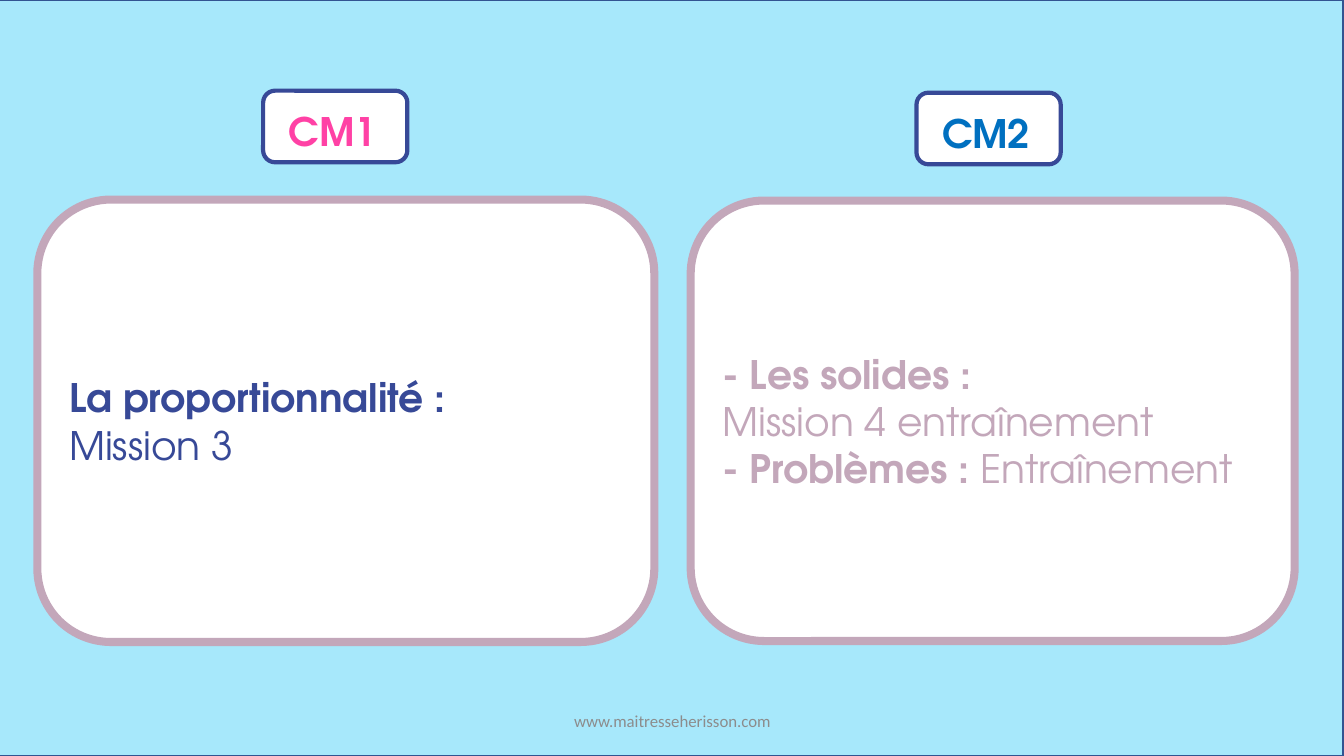
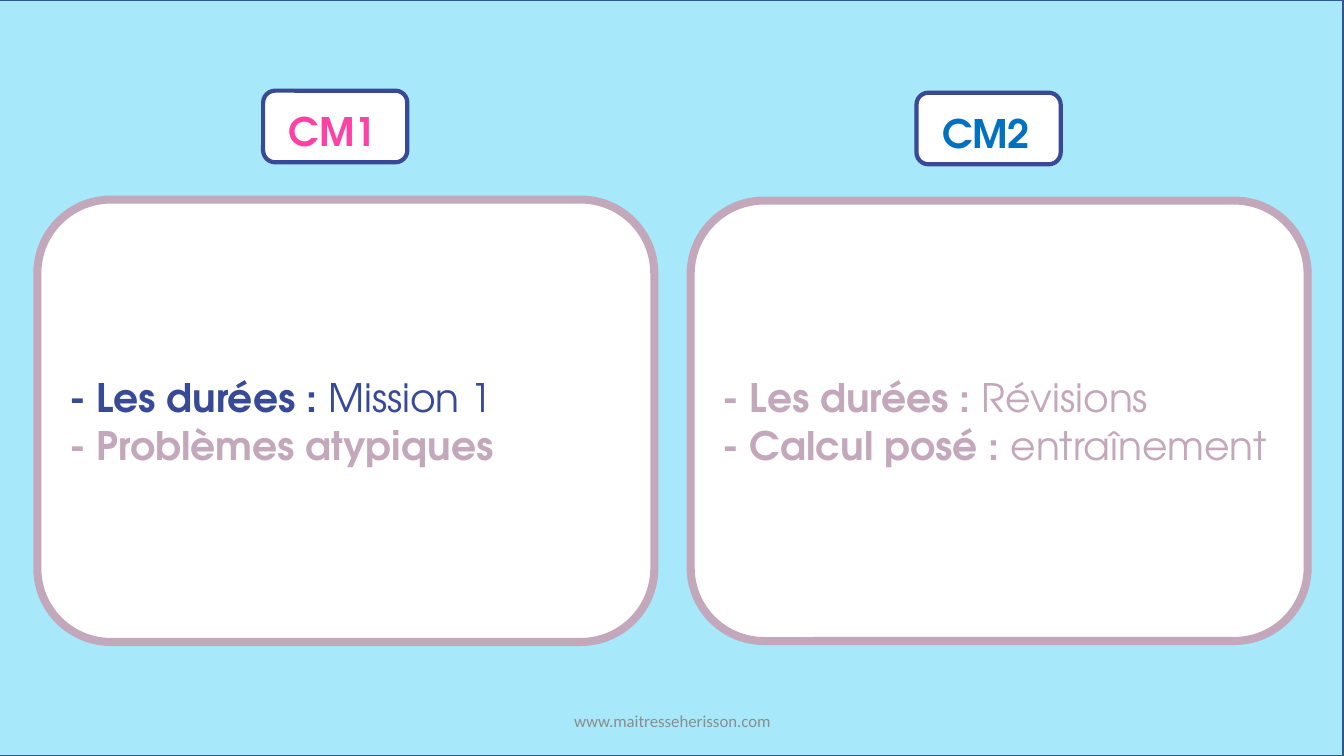
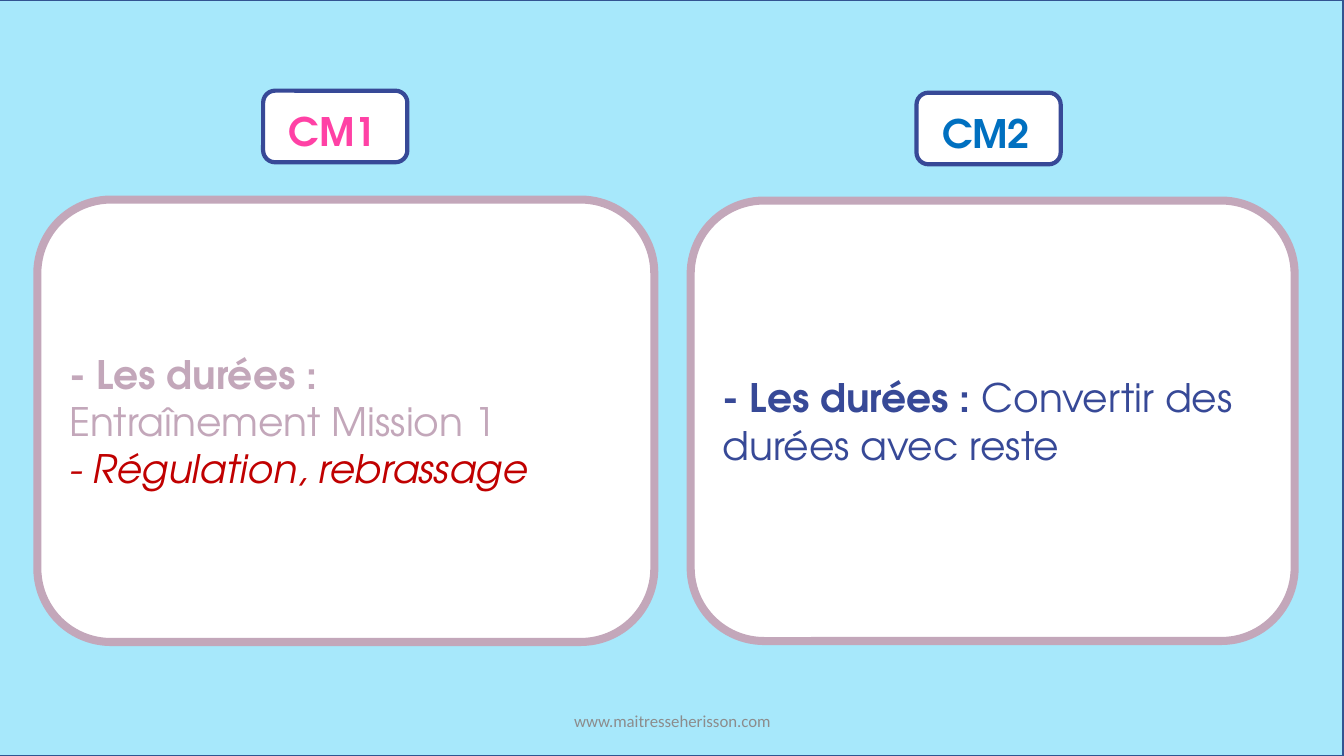
from pptx import Presentation
from pptx.dml.color import RGBColor
from pptx.enum.shapes import MSO_SHAPE
from pptx.enum.text import MSO_ANCHOR, MSO_AUTO_SIZE, PP_ALIGN
from pptx.oxml import parse_xml
from pptx.oxml.ns import nsdecls
from pptx.util import Inches, Pt

RECT, ROUND = MSO_SHAPE.RECTANGLE, MSO_SHAPE.ROUNDED_RECTANGLE
TOP, MID = MSO_ANCHOR.TOP, MSO_ANCHOR.MIDDLE
LEFT, CENTER = PP_ALIGN.LEFT, PP_ALIGN.CENTER
NOFIT = MSO_AUTO_SIZE.NONE

WIDE, HIGH = 13.33, 7.5
SKY, EDGE, WHITE = "A7E8FB", "325491", "FFFFFF"
NAVY, MAUVE, RED = "374997", "C3A7BA", "C00000"
PINK, BLUE, GREY = "FF41A5", "0070C0", "8C8C8C"
FONT, SMALL = "TeX Gyre Adventor", "Calibri"
COMPARE = 4
FULL, SLIM = 45.91, 44.94

SIDES = [
    {"label": "CM1", "color": PINK, "x": 2.78, "badge": 12, "y": 26.4, "h": 58.53, "ids": (1, 2)},
    {"label": "CM2", "color": BLUE, "x": 51.39, "badge": 12.27, "y": 26.53, "h": 58.27, "ids": (3, 4)},
]

PAGES = [
    [
        (FULL, [[("La proportionnalité :", NAVY, "b")],
                [("Mission 3", NAVY, "")]]),
        (SLIM, [[("- Les solides :", MAUVE, "b")],
                [("Mission 4 entraînement", MAUVE, "")],
                [("- Problèmes : ", MAUVE, "b"), ("Entraînement", MAUVE, "")]]),
    ],
    [
        (FULL, [[("- Les durées : ", NAVY, "b"), ("Mission 1", NAVY, "")],
                [("- Problèmes atypiques", MAUVE, "b")]]),
        (FULL, [[("- Les durées : ", MAUVE, "b"), ("Révisions", MAUVE, "")],
                [("- Calcul posé : ", MAUVE, "b"), ("entraînement", MAUVE, "")]]),
    ],
    [
        (FULL, [[("- Les durées :", MAUVE, "b")],
                [("Entraînement Mission 1", MAUVE, "")],
                [("- Régulation, rebrassage", RED, "i")]]),
        (SLIM, [[("- Les durées : ", NAVY, "b"),
                 ("Convertir des durées avec reste", NAVY, "")]]),
    ],
]


def rgb(code):
    """Turn a hex string into a colour."""
    return RGBColor.from_string(code)


def area(x, y, w, h):
    """Turn percentages of the slide into lengths."""
    return [Inches(part * size / 100)
            for part, size in zip((x, y, w, h), (WIDE, HIGH) * 2)]


def panel(slide, kind, box, fill, line, width):
    """Draw a filled and outlined shape."""
    shape = slide.shapes.add_shape(kind, *area(*box))
    shape.shadow.inherit = False
    shape.fill.solid()
    shape.fill.fore_color.rgb = rgb(fill)
    shape.line.color.rgb = rgb(line)
    shape.line.width = Pt(width)


def write(shape, rows, anchor, align=LEFT, font=FONT, size=28):
    """Write rows of (text, colour, style) runs without bullets."""
    frame = shape.text_frame
    frame.word_wrap = True
    frame.auto_size = NOFIT
    frame.vertical_anchor = anchor
    for index, row in enumerate(rows):
        para = frame.add_paragraph() if index else frame.paragraphs[0]
        props = para._p.get_or_add_pPr()
        props.set("marL", "0")
        props.set("indent", "0")
        props.append(parse_xml(f"<a:buNone {nsdecls('a')}/>"))
        para.alignment = align
        para.space_before = Pt(0)
        for text, color, style in row:
            run = para.add_run()
            run.text = text
            run.font.name = font
            run.font.size = Pt(size)
            run.font.bold = "b" in style
            run.font.italic = "i" in style
            run.font.color.rgb = rgb(color)


def fill_in(slide, number, box, rows, anchor):
    """Move a placeholder to the front and write in it."""
    holder = next(item for item in slide.placeholders
                  if item.placeholder_format.idx == number)
    holder.left, holder.top, holder.width, holder.height = area(*box)
    slide.shapes._spTree.append(holder.element)
    write(holder, rows, anchor)


def column(slide, side, width, rows):
    """Draw a class badge above its card."""
    x, y, high, top = side["x"], side["y"], side["h"], side["badge"]
    badge, body = side["ids"]
    panel(slide, ROUND, (x + 16.8, top, 10.73, 9.47), WHITE, NAVY, 3)
    fill_in(slide, badge, (x + 17.95, top + 1.47, 8.25, 7.6),
            [[(side["label"], side["color"], "b")]], TOP)
    panel(slide, ROUND, (x, y, width, high), WHITE, MAUVE, 5.75)
    fill_in(slide, body, (x + 1.61, y + 2.86, width - 3.22, high - 5.72),
            rows, MID)


def footer(slide):
    """Write the web address at the foot."""
    box = slide.shapes.add_textbox(*area(33.16, 92.67, 33.76, 5.33))
    write(box, [[("www.maitresseherisson.com", GREY, "")]], MID, CENTER, SMALL, 12)


def main():
    """Build and save the deck."""
    deck = Presentation()
    deck.slide_width, deck.slide_height = Inches(WIDE), Inches(HIGH)
    for page in PAGES:
        slide = deck.slides.add_slide(deck.slide_layouts[COMPARE])
        title = slide.shapes.title.element
        title.getparent().remove(title)
        panel(slide, RECT, (-0.08, 0, 100, 100), SKY, EDGE, 1)
        for side, (width, rows) in zip(SIDES, page):
            column(slide, side, width, rows)
        footer(slide)
    deck.save("out.pptx")


if __name__ == "__main__":
    main()
